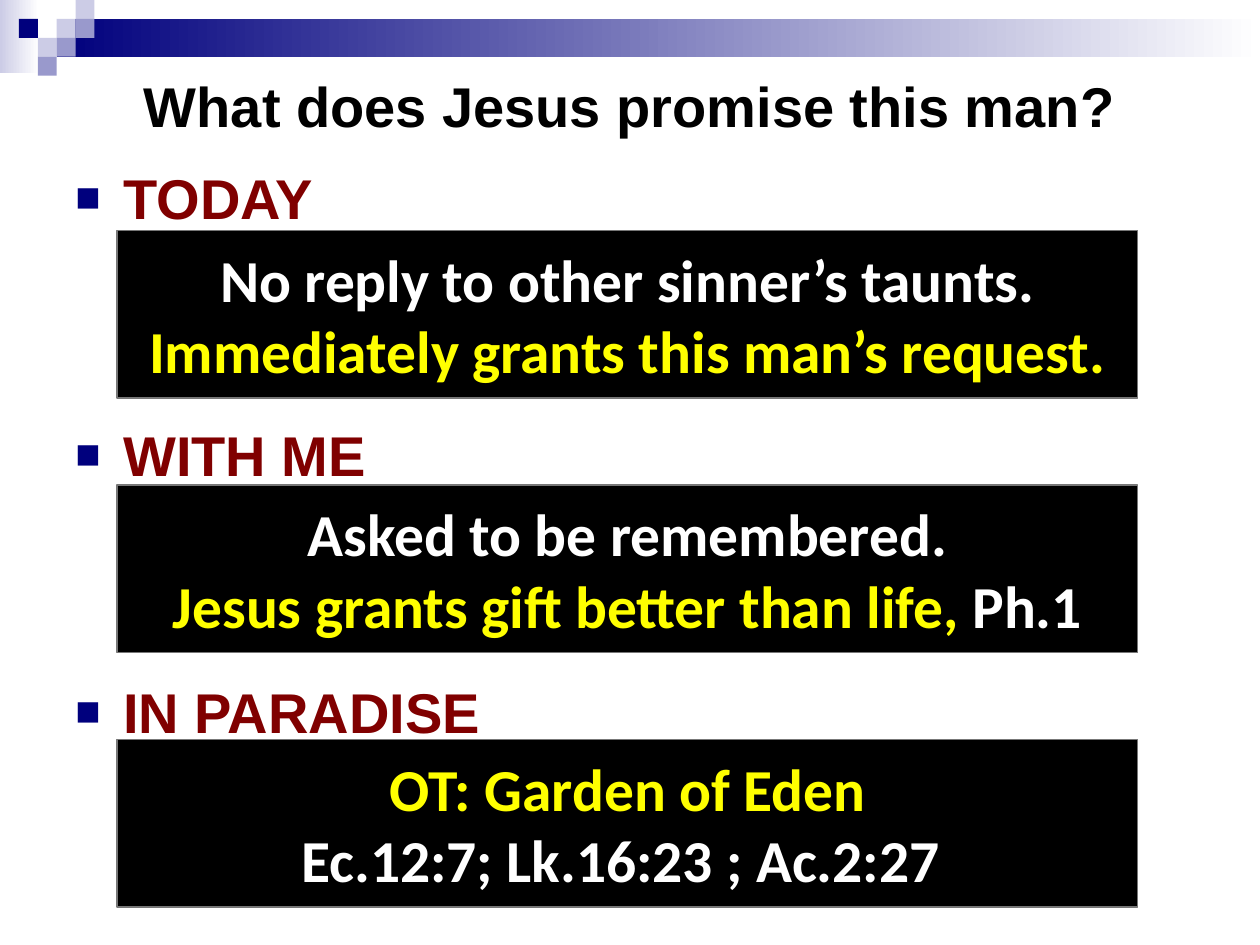
import dataclasses

import pptx
import pptx.dml.color
import pptx.enum.shapes
import pptx.enum.text
import pptx.oxml
import pptx.oxml.ns
import pptx.util

Inches = pptx.util.Inches
Pt = pptx.util.Pt
PP_ALIGN = pptx.enum.text.PP_ALIGN
MSO_ANCHOR = pptx.enum.text.MSO_ANCHOR


@dataclasses.dataclass(frozen=True)
class Theme:
    """Colours, fonts and type sizes of the slide."""
    navy: str = "00007D"
    lilac: str = "9999CC"
    pale: str = "CCCCE6"
    white: str = "FFFFFF"
    black: str = "000000"
    maroon: str = "800000"
    yellow: str = "FFFF00"
    edge: str = "777777"
    heading_font: str = "Arial"
    card_font: str = "Calibri"
    heading_size: int = 32
    card_size: int = 34


THEME = Theme()
TITLE = "What does Jesus promise this man?"
POINTS = ["TODAY", "WITH ME", "IN PARADISE"]
CARDS = [
    [[("No reply to other sinner’s taunts.", THEME.white)],
     [("Immediately grants this man’s request.", THEME.yellow)]],
    [[("Asked to be remembered.", THEME.white)],
     [("Jesus grants gift better than life, ", THEME.yellow), ("Ph.1", THEME.white)]],
    [[("OT: Garden of Eden", THEME.yellow)],
     [("Ec.12:7; Lk.16:23 ; Ac.2:27 ", THEME.white)]],
]


def rgb(value):
    """Return a colour object for a hex string."""
    return pptx.dml.color.RGBColor.from_string(value)


def add_run(p, text, *, font, size, color, bold=True):
    """Add formatted text to a paragraph."""
    r = p.add_run()
    r.text = text
    r.font.name = font
    r.font.size = Pt(size)
    r.font.bold = bold
    r.font.color.rgb = rgb(color)
    return r


def add_rect(s, left, top, width, height, *colors, line=None):
    """Add a rectangle with a solid fill, or a gradient for two colours."""
    sp = s.shapes.add_shape(pptx.enum.shapes.MSO_SHAPE.RECTANGLE, left, top, width, height)
    sp.shadow.inherit = False
    if len(colors) == 1:
        sp.fill.solid()
        sp.fill.fore_color.rgb = rgb(colors[0])
    else:
        sp.fill.gradient()
        sp.fill.gradient_angle = 0
        for stop, color, position in zip(sp.fill.gradient_stops, colors, (0, 1)):
            stop.color.rgb = rgb(color)
            stop.position = position
    if line:
        sp.line.color.rgb = rgb(line)
        sp.line.width = Pt(0.75)
    else:
        sp.line.fill.background()
    return sp


def add_bullet(p):
    """Give a paragraph a navy square bullet and a hanging indent."""
    pPr = p._p.get_or_add_pPr()
    pPr.set("marL", str(Inches(0.38)))
    pPr.set("indent", str(-Inches(0.38)))
    ns = pptx.oxml.ns.nsdecls("a")
    for xml in (f'<a:buClr {ns}><a:srgbClr val="{THEME.navy}"/></a:buClr>',
                f'<a:buSzPct {ns} val="75000"/>',
                f'<a:buFont {ns} typeface="{THEME.heading_font}"/>',
                f'<a:buChar {ns} char="■"/>'):
        pPr.append(pptx.oxml.parse_xml(xml))


def add_banner(s, left, top, width):
    """Draw the gradient bar and the checkered squares."""
    unit = Inches(0.15)
    add_rect(s, left, top, Inches(0.31), Inches(0.58), THEME.pale, THEME.white)
    add_rect(s, left + 3 * unit, top + unit, width - 3 * unit, 2 * unit,
             THEME.navy, THEME.white)
    squares = [(3, 1, THEME.pale), (4, 0, THEME.pale), (4, 1, THEME.lilac),
               (2, 2, THEME.pale), (1, 1, THEME.navy), (3, 2, THEME.lilac),
               (2, 3, THEME.lilac)]
    for column, row, color in squares:
        add_rect(s, left + column * unit, top + row * unit, unit, unit, color)


def add_title(s, left, top, width, height):
    """Place the centred title."""
    tf = s.shapes.add_textbox(left, top, width, height).text_frame
    tf.word_wrap = True
    tf.vertical_anchor = MSO_ANCHOR.MIDDLE
    p = tf.paragraphs[0]
    p.alignment = PP_ALIGN.CENTER
    add_run(p, TITLE, font=THEME.heading_font, size=THEME.heading_size, color=THEME.black)


def add_points(s, left, top, width, height):
    """Place the bulleted headings, spaced to leave room for the cards."""
    tf = s.shapes.add_textbox(left, top, width, height).text_frame
    tf.word_wrap = True
    for i, text in enumerate(POINTS):
        p = tf.add_paragraph() if i else tf.paragraphs[0]
        p.space_before = Pt(102.5 if i else 0)
        p.space_after = Pt(6)
        add_bullet(p)
        add_run(p, text, font=THEME.heading_font, size=THEME.heading_size,
                color=THEME.maroon)


def add_card(s, left, top, width, height, lines):
    """Place one black card with its centred lines."""
    sp = add_rect(s, left, top, width, height, THEME.black, line=THEME.edge)
    tf = sp.text_frame
    tf.word_wrap = True
    tf.vertical_anchor = MSO_ANCHOR.MIDDLE
    for i, line in enumerate(lines):
        p = tf.add_paragraph() if i else tf.paragraphs[0]
        p.alignment = PP_ALIGN.CENTER
        for text, color in line:
            add_run(p, text, font=THEME.card_font, size=THEME.card_size, color=color)


def main():
    """Build and save the slide."""
    prs = pptx.Presentation()
    prs.slide_width, prs.slide_height = Inches(10), Inches(7.5)
    s = prs.slides.add_slide(prs.slide_layouts[6])
    add_banner(s, 0, 0, prs.slide_width)
    add_title(s, Inches(0.5), Inches(0.42), Inches(9), Inches(0.83))
    add_points(s, Inches(0.5), Inches(1.25), Inches(9), Inches(5.92))
    for i, lines in enumerate(CARDS):
        add_card(s, Inches(0.93), Inches(1.83 + 2.02 * i), Inches(8.1), Inches(1.33), lines)
    prs.save("out.pptx")


if __name__ == "__main__":
    main()
